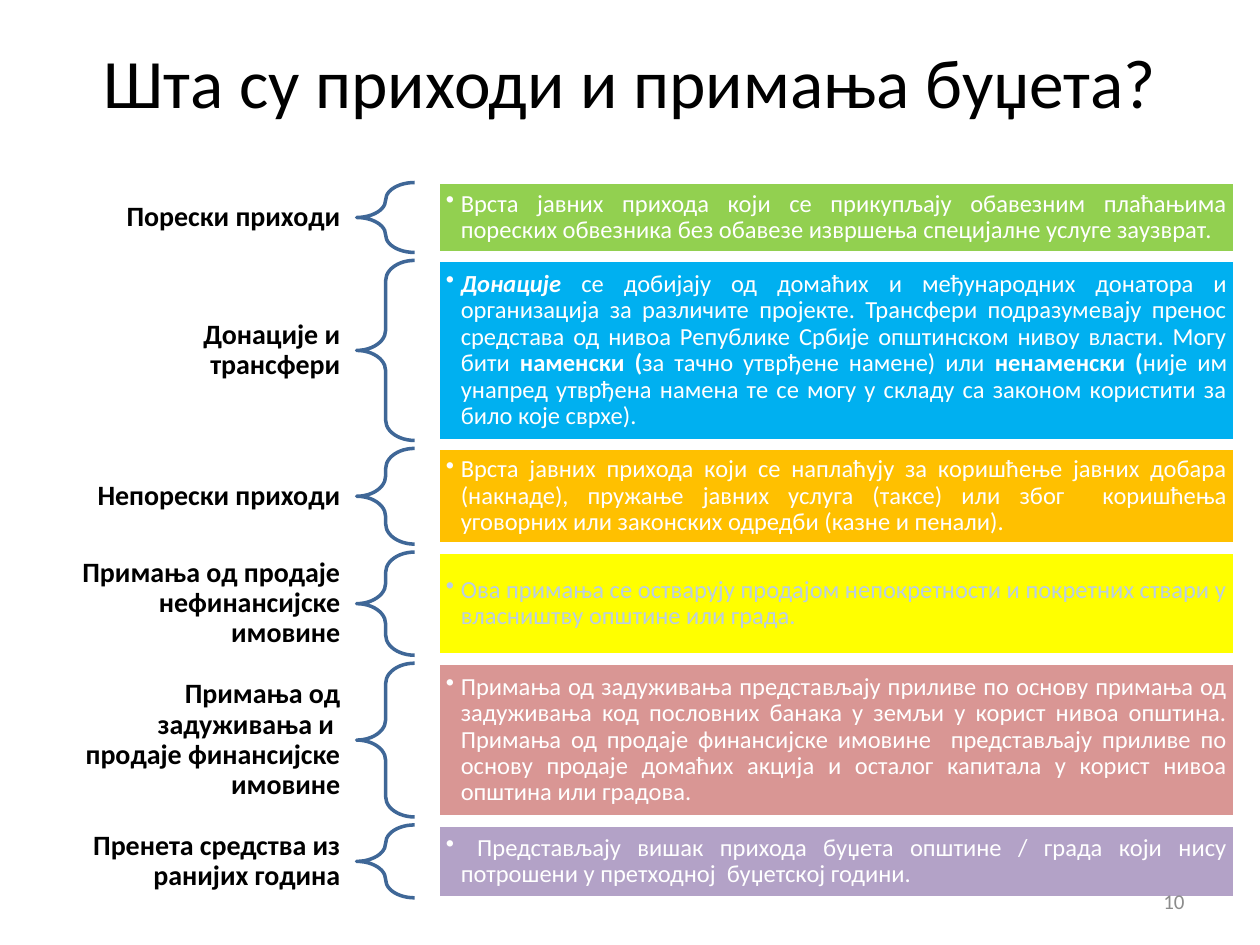
"""Build a slide that explains the kinds of budget revenue, one braced row each."""
from lxml import etree
from pptx import Presentation
from pptx import util as u
from pptx.dml.color import RGBColor
from pptx.enum import shapes, text
from pptx.oxml import ns

BLACK = RGBColor(0x00, 0x00, 0x00)
WHITE = RGBColor(0xFF, 0xFF, 0xFF)
GREY = RGBColor(0x8C, 0x8C, 0x8C)
NAVY = RGBColor(0x3F, 0x67, 0x97)
PALE_BLUE = RGBColor(0xB9, 0xCD, 0xE5)
GREEN = RGBColor(0x92, 0xD0, 0x50)
BLUE = RGBColor(0x00, 0xB0, 0xF0)
ORANGE = RGBColor(0xFF, 0xC0, 0x00)
YELLOW = RGBColor(0xFF, 0xFF, 0x00)
ROSE = RGBColor(0xD9, 0x96, 0x94)
PURPLE = RGBColor(0xB3, 0xA2, 0xC7)

FONT = "Calibri"
FIRST_TOP = 3.68
ROW_GAP = 0.16

# Label, label height, row height, fill, text colour, runs of (wording, bold, italic)
ROWS = [
    ("Порески приходи", 0.89, 1.41, GREEN, WHITE, [
        ("Врста јавних прихода који се прикупљају обавезним плаћањима пореских "
         "обвезника без обавезе извршења специјалне услуге заузврат.", False, False)]),
    ("Донације и трансфери", 1.47, 3.63, BLUE, WHITE, [
        ("Донације ", True, True),
        ("се добијају од домаћих и међународних донатора и организација за различите "
         "пројекте. Трансфери подразумевају пренос средстава од нивоа Републике Србије "
         "општинском нивоу власти. Могу бити ", False, False),
        ("наменски (", True, False),
        ("за тачно утврђене намене) или ", False, False),
        ("ненаменски (", True, False),
        ("није им унапред утврђена намена те се могу у складу са законом користити "
         "за било које сврхе).", False, False)]),
    ("Непорески приходи", 0.89, 1.93, ORANGE, WHITE, [
        ("Врста јавних прихода који се наплаћују за коришћење јавних добара (накнаде), "
         "пружање јавних услуга (таксе) или због  коришћења уговорних или законских "
         "одредби (казне и пенали).", False, False)]),
    ("Примања од продаје нефинансијске имовине", 2.08, 2.08, YELLOW, PALE_BLUE, [
        ("Ова примања се остварују продајом непокретности и покретних ствари у "
         "власништву општине или града.", False, False)]),
    ("Примања од задуживања и  продаје финансијске имовине", 2.74, 3.1, ROSE, WHITE, [
        ("Примања од задуживања представљају приливе по основу примања од задуживања "
         "код пословних банака у земљи у корист нивоа општина. Примања од продаје "
         "финансијске имовине  представљају приливе по основу продаје домаћих акција "
         "и осталог капитала у корист нивоа општина или градова.", False, False)]),
    ("Пренета средства из ранијих година", 1.47, 1.47, PURPLE, WHITE, [
        (" Представљају вишак прихода буџета општине / града који нису потрошени у "
         "претходној  буџетској години.", False, False)]),
]


def write_text(shape, runs, size, color, align, margins=(0.25, 0.13), spacing=1.0):
    """Fill a shape with one paragraph of formatted runs and return the paragraph."""
    frame = shape.text_frame
    frame.word_wrap = True
    frame.vertical_anchor = text.MSO_ANCHOR.MIDDLE
    frame.margin_left = frame.margin_right = u.Cm(margins[0])
    frame.margin_top = frame.margin_bottom = u.Cm(margins[1])
    paragraph = frame.paragraphs[0]
    paragraph.alignment = align
    paragraph.line_spacing = spacing
    for wording, bold, italic in runs:
        run = paragraph.add_run()
        run.text = wording
        run.font.name = FONT
        run.font.size = u.Pt(size)
        run.font.bold = bold
        run.font.italic = italic
        run.font.color.rgb = color
    return paragraph


def add_text(slide, box, wording, size, color, align, bold=False, **layout):
    """Add a text box that holds a single run."""
    shape = slide.shapes.add_textbox(*map(u.Cm, box))
    write_text(shape, [(wording, bold, False)], size, color, align, **layout)


def add_outlined(slide, kind, box, line_color):
    """Add a preset shape with a two-point line and no shadow."""
    shape = slide.shapes.add_shape(kind, *map(u.Cm, box))
    shape.shadow.inherit = False
    shape.line.color.rgb = line_color
    shape.line.width = u.Pt(2)
    return shape


def add_bullet(paragraph):
    """Give a paragraph a round bullet with a hanging indent."""
    properties = paragraph._p.get_or_add_pPr()
    properties.set("marL", str(u.Cm(0.3)))
    properties.set("indent", str(u.Cm(-0.3)))
    etree.SubElement(properties, ns.qn("a:buChar")).set("char", "•")


def add_brace(slide, top, height):
    """Add the brace that joins a label to its description."""
    brace = add_outlined(slide, shapes.MSO_SHAPE.LEFT_BRACE, (7.19, top, 1.17, height), NAVY)
    brace.fill.background()
    brace.adjustments[0] = 0.35
    brace.adjustments[1] = 0.5


def add_description(slide, top, height, fill, color, runs):
    """Add the coloured panel with its bulleted description."""
    panel = add_outlined(slide, shapes.MSO_SHAPE.RECTANGLE, (8.84, top, 16.05, height), WHITE)
    panel.fill.solid()
    panel.fill.fore_color.rgb = fill
    paragraph = write_text(panel, runs, 14, color, text.PP_ALIGN.JUSTIFY, (0.15, 0.15), 0.9)
    add_bullet(paragraph)


def main():
    """Build and save the slide."""
    presentation = Presentation()
    presentation.slide_width = u.Cm(25.4)
    presentation.slide_height = u.Cm(19.05)
    slide = presentation.slides.add_slide(presentation.slide_layouts[6])
    add_text(slide, (1.27, 0.76, 22.86, 1.73), "Шта су приходи и примања буџета?",
             39.6, BLACK, text.PP_ALIGN.CENTER)
    top = FIRST_TOP
    for label, label_height, height, fill, color, runs in ROWS:
        label_top = top + (height - label_height) / 2
        add_text(slide, (1.27, label_top, 5.9, label_height), label, 16, BLACK,
                 text.PP_ALIGN.RIGHT, bold=True, margins=(0.31, 0.1), spacing=0.9)
        add_brace(slide, top, height)
        add_description(slide, top, height, fill, color, runs)
        top += height + ROW_GAP
    add_text(slide, (18.2, 17.66, 5.93, 1.01), "10", 12, GREY, text.PP_ALIGN.RIGHT)
    presentation.save("out.pptx")


if __name__ == "__main__":
    main()
